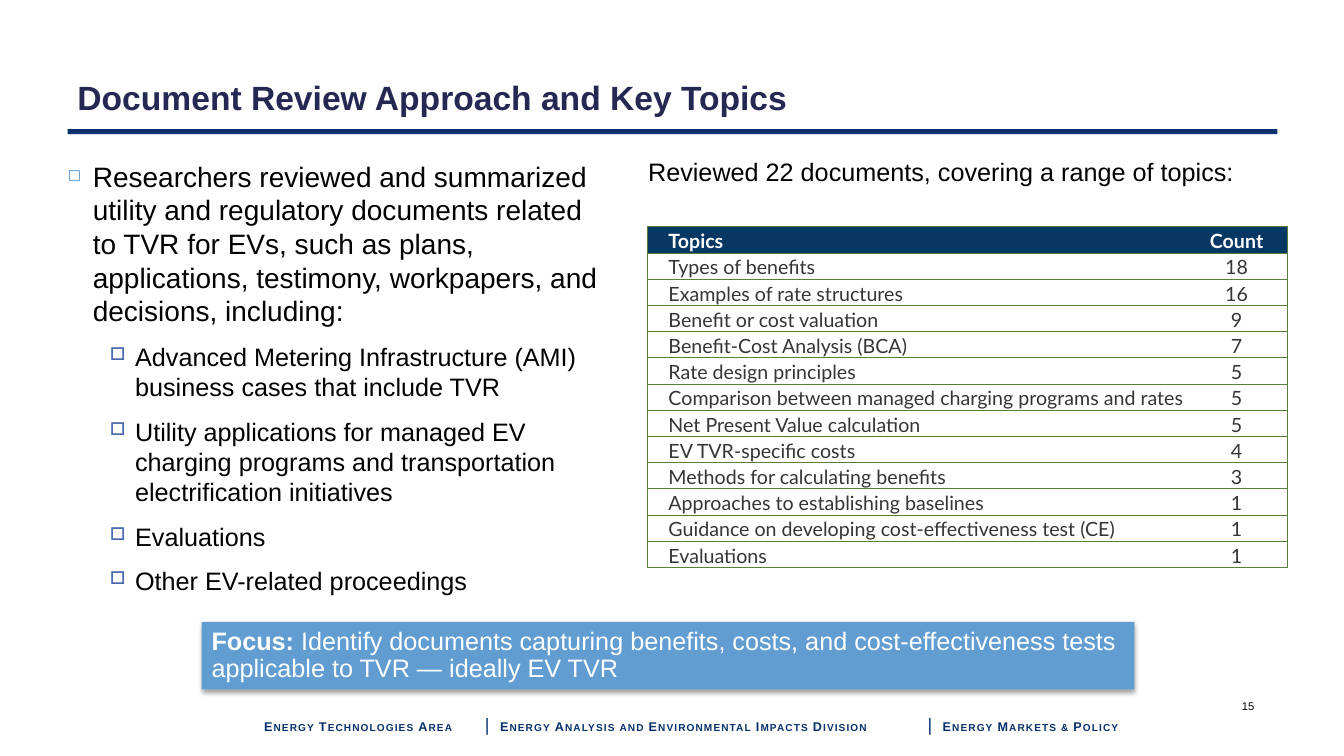
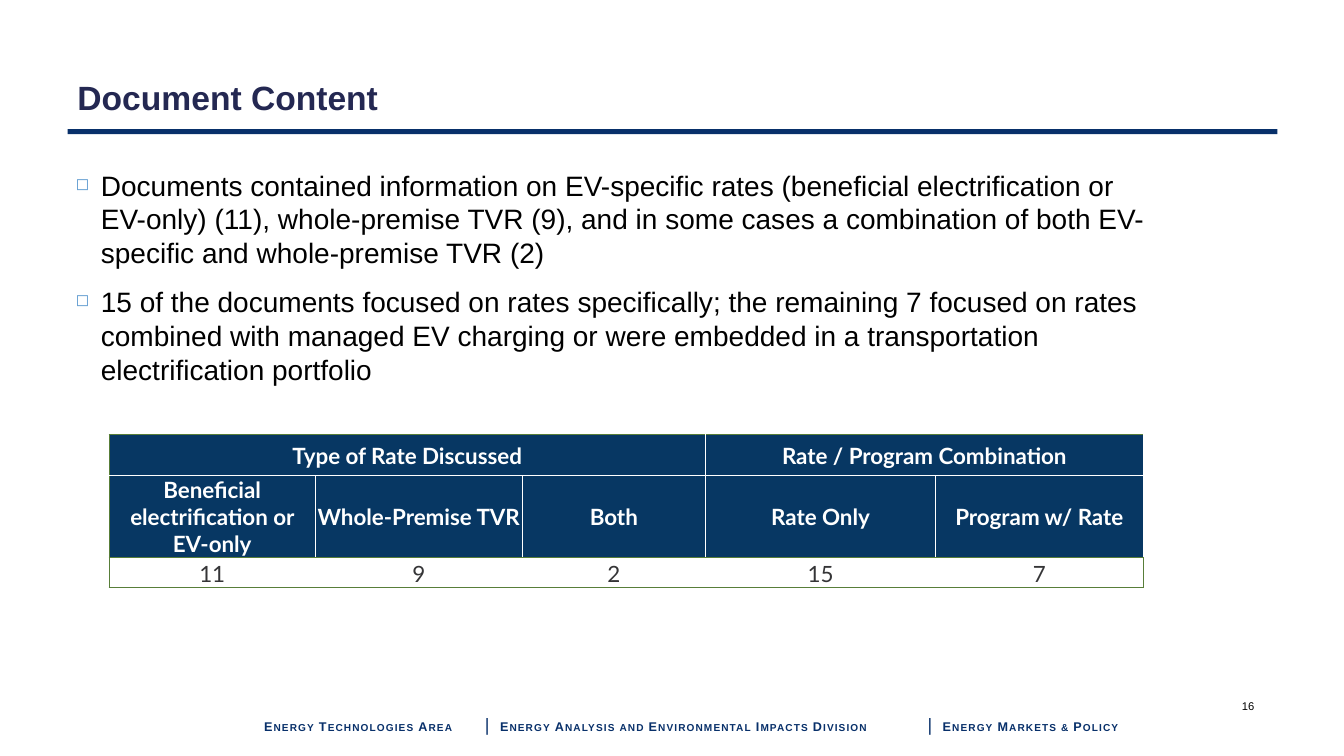
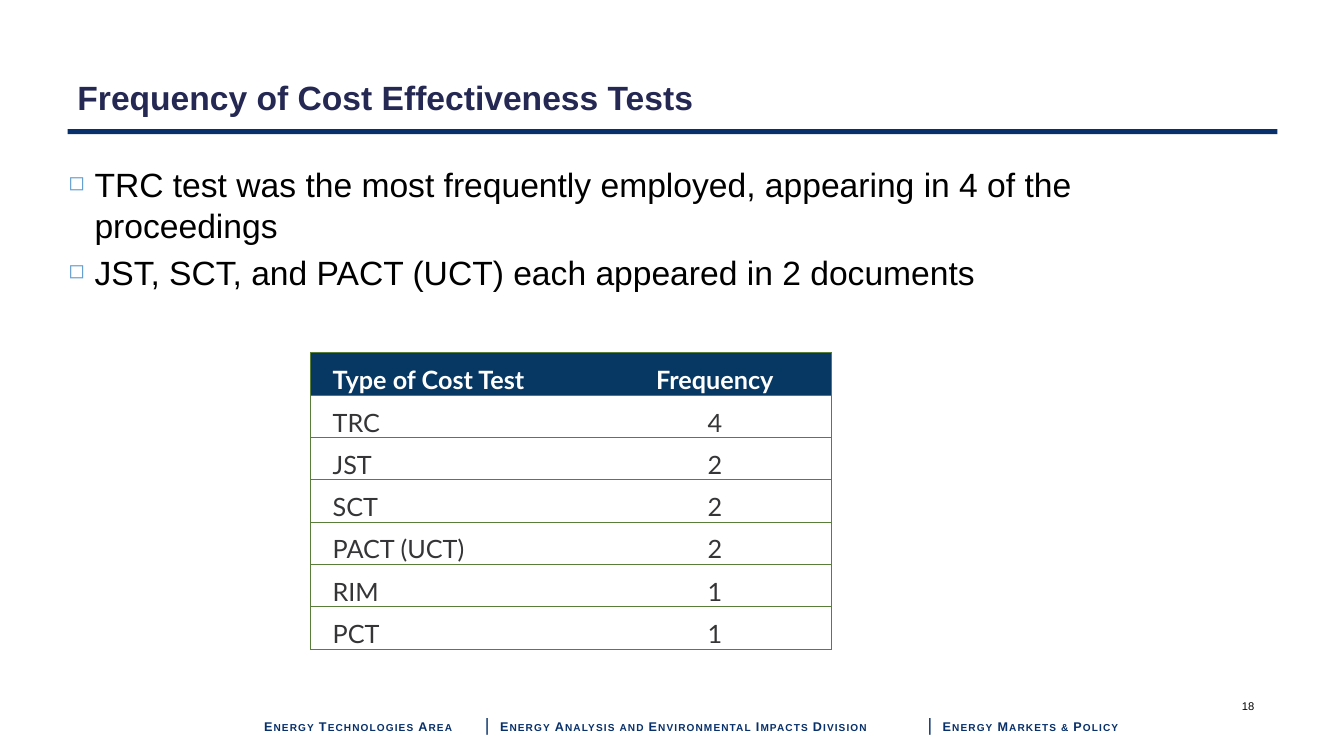
from dataclasses import dataclass
from typing import Optional

from lxml import etree
from pptx import Presentation
from pptx.dml.color import RGBColor
from pptx.enum.shapes import MSO_SHAPE
from pptx.enum.text import MSO_ANCHOR, PP_ALIGN
from pptx.oxml.ns import qn
from pptx.util import Inches, Pt

RECTANGLE = MSO_SHAPE.RECTANGLE
TOP, MIDDLE, BOTTOM = MSO_ANCHOR.TOP, MSO_ANCHOR.MIDDLE, MSO_ANCHOR.BOTTOM
LEFT, CENTER = PP_ALIGN.LEFT, PP_ALIGN.CENTER

BODY_FONT, TABLE_FONT = "Arial", "Lato"
NAVY, TITLE_INK, HEADER_FILL = "08306A", "242852", "073763"
SKY, INDIGO, GREEN = "629DD1", "4A66AC", "587E39"
BLACK, WHITE, GREY = "000000", "FFFFFF", "353537"
NO_STYLE = "{2D5ABB26-0587-4C30-8999-92F81FD0307C}"

FOOTER_PARTS = [
    "Energy Technologies Area\t",
    "|",
    "\tEnergy Analysis and Environmental Impacts Division\t",
    "|",
    "\tEnergy Markets & Policy",
]
FOOTER_TABS = [2.19, 2.34, 6.58, 6.73]


@dataclass
class Bullet:
    """Look of one bullet level."""
    char: str
    color: str
    percent: int
    indent: float
    hanging: float
    size: int
    before: float
    after: float


@dataclass
class Grid:
    """A table with one or more header rows."""
    left: float
    top: float
    widths: list[float]
    heights: list[float]
    rows: list[list[str]]
    size: int
    inset: float
    header_rows: int = 1
    header_line: Optional[str] = None
    label_column: bool = True
    header_anchor: MSO_ANCHOR = BOTTOM


MAIN = Bullet("◻", SKY, 60, 0.25, 0.25, 20, 5.2, 6)
SUB = Bullet("□", INDIGO, 70, 0.67, 0.25, 18, 4.1, 6)
LARGE = Bullet("◻", SKY, 60, 0.26, 0.26, 24, 5.2, 0)


def rgb(color: str) -> RGBColor:
    return RGBColor.from_string(color)


def add_node(parent, tag: str, **attributes):
    node = etree.SubElement(parent, qn(tag))
    for name, value in attributes.items():
        node.set(name, str(value))
    return node


def set_font(font, size: int, color: str, name: str = BODY_FONT, bold: bool = False) -> None:
    font.size, font.name, font.bold = Pt(size), name, bold
    font.color.rgb = rgb(color)


def add_box(page, left: float, top: float, width: float, height: float,
            anchor: MSO_ANCHOR = TOP, inset: Optional[float] = None):
    """Add a wrapping text box and return its text frame."""
    frame = page.shapes.add_textbox(
        Inches(left), Inches(top), Inches(width), Inches(height)).text_frame
    frame.word_wrap = True
    frame.vertical_anchor = anchor
    if inset is not None:
        set_margins(frame, inset, inset)
    return frame


def set_margins(target, side: float, top: float, bottom: Optional[float] = None) -> None:
    target.margin_left = target.margin_right = Inches(side)
    target.margin_top = Inches(top)
    target.margin_bottom = Inches(top if bottom is None else bottom)


def add_line(page, text: str, left: float, top: float, width: float, height: float,
             size: int, color: str = BLACK, bold: bool = False,
             anchor: MSO_ANCHOR = TOP) -> None:
    para = add_box(page, left, top, width, height, anchor).paragraphs[0]
    para.text = text
    set_font(para.font, size, color, bold=bold)


def add_rectangle(page, left: float, top: float, width: float, height: float, fill: str):
    box = page.shapes.add_shape(
        RECTANGLE, Inches(left), Inches(top), Inches(width), Inches(height))
    box.shadow.inherit = False
    box.fill.solid()
    box.fill.fore_color.rgb = rgb(fill)
    box.line.fill.background()
    return box


def add_bullets(frame, items: list[tuple[Bullet, str]]) -> None:
    for index, (style, text) in enumerate(items):
        para = frame.add_paragraph() if index else frame.paragraphs[0]
        para.text = text
        properties = para._p.get_or_add_pPr()
        properties.set("marL", str(Inches(style.indent)))
        properties.set("indent", str(-Inches(style.hanging)))
        add_node(add_node(properties, "a:buClr"), "a:srgbClr", val=style.color)
        add_node(properties, "a:buSzPct", val=style.percent * 1000)
        add_node(properties, "a:buChar", char=style.char)
        para.space_before = Pt(style.before if index else 0)
        para.space_after = Pt(style.after)
        set_font(para.font, style.size, BLACK)


def add_footer(page) -> None:
    frame = add_box(page, 2.14, 6.99, 9.67, 0.48)
    frame.margin_left = Inches(0.48)
    para = frame.paragraphs[0]
    tabs = add_node(para._p.get_or_add_pPr(), "a:tabLst")
    for position in FOOTER_TABS:
        add_node(tabs, "a:tab", pos=Inches(position), algn="l")
    para.font.name = BODY_FONT
    para.font.color.rgb = rgb(NAVY)
    for part in FOOTER_PARTS:
        span = para.add_run()
        span.text = part
        is_bar = part == "|"
        span.font.size, span.font.bold = Pt(16 if is_bar else 9), not is_bar
        properties = span._r.get_or_add_rPr()
        properties.set("spc", "80")
        properties.set("cap", "small")


def add_page(deck, title: str, number: int):
    """Add a slide with the shared title, rule, footer and page number."""
    page = deck.slides.add_slide(deck.slide_layouts[6])
    add_rectangle(page, 0.67, 1.28, 12, 0.05, NAVY)
    add_footer(page)
    add_line(page, title, 0.67, 0.71, 12, 0.5, 24, TITLE_INK, True, BOTTOM)
    add_line(page, str(number), 12.22, 6.89, 0.5, 0.4, 8)
    return page


def set_borders(cell, grid: Grid, row: int, column: int) -> None:
    """Green frame and row lines; header rows may have their own inner lines."""
    inner = grid.header_line if row < grid.header_rows else None
    last_header = row == grid.header_rows - 1
    is_last = column == len(grid.widths) - 1
    colors = {
        "a:lnL": inner if column else GREEN,
        "a:lnR": inner or (GREEN if is_last else None),
        "a:lnT": inner if row and inner else GREEN,
        "a:lnB": inner if inner and not last_header else GREEN,
    }
    properties = cell._tc.get_or_add_tcPr()
    for tag, color in colors.items():
        if color:
            line = add_node(properties, tag, w=Pt(0.5))
            add_node(add_node(line, "a:solidFill"), "a:srgbClr", val=color)


def add_grid(page, grid: Grid):
    table = page.shapes.add_table(
        len(grid.rows), len(grid.widths), Inches(grid.left), Inches(grid.top),
        Inches(sum(grid.widths)), Inches(sum(grid.heights))).table
    table.first_row = table.horz_banding = False
    table._tbl.tblPr.find(qn("a:tableStyleId")).text = NO_STYLE
    for column, width in zip(table.columns, grid.widths):
        column.width = Inches(width)
    for row, height in zip(table.rows, grid.heights):
        row.height = Inches(height)
    for row, texts in enumerate(grid.rows):
        is_header = row < grid.header_rows
        for column, text in enumerate(texts):
            cell = table.cell(row, column)
            set_borders(cell, grid, row, column)
            if is_header:
                cell.fill.solid()
                cell.fill.fore_color.rgb = rgb(HEADER_FILL)
            else:
                cell.fill.background()
            set_margins(cell, grid.inset, grid.inset, 0)
            cell.vertical_anchor = grid.header_anchor if is_header else BOTTOM
            para = cell.text_frame.paragraphs[0]
            para.text = text
            is_label = grid.label_column and column == 0
            para.alignment = LEFT if is_label else CENTER
            if is_label:
                para._p.get_or_add_pPr().set("marL", str(Inches(0.2)))
            set_font(para.font, grid.size, WHITE if is_header else GREY, TABLE_FONT, is_header)
    return table


def add_focus(page, label: str, text: str) -> None:
    """Shadowed call-out with a bold lead word."""
    box = add_rectangle(page, 2, 6.17, 9.25, 0.67, SKY)
    effects = box._element.spPr.find(qn("a:effectLst"))
    shadow = add_node(effects, "a:outerShdw", blurRad=Pt(3), dist=Pt(2),
                      dir=90 * 60000, rotWithShape=0)
    add_node(add_node(shadow, "a:srgbClr", val=BLACK), "a:alpha", val=35000)
    frame = box.text_frame
    frame.word_wrap = True
    frame.vertical_anchor = MIDDLE
    para = frame.paragraphs[0]
    para.alignment, para.line_spacing = LEFT, 0.9
    para.font.size, para.font.name = Pt(18), BODY_FONT
    para.font.color.rgb = rgb(WHITE)
    for words, bold in ((label, True), (text, False)):
        span = para.add_run()
        span.text, span.font.bold = words, bold


def build_review(deck) -> None:
    page = add_page(deck, "Document Review Approach and Key Topics", 15)
    add_bullets(add_box(page, 0.67, 1.58, 5.39, 4.78, inset=0), [
        (MAIN, "Researchers reviewed and summarized utility and regulatory documents related "
               "to TVR for EVs, such as plans, applications, testimony, workpapers, and "
               "decisions, including:"),
        (SUB, "Advanced Metering Infrastructure (AMI) business cases that include TVR"),
        (SUB, "Utility applications for managed EV charging programs and transportation "
              "electrification initiatives"),
        (SUB, "Evaluations"),
        (SUB, "Other EV-related proceedings"),
    ])
    add_focus(page, "Focus: ",
              "Identify documents capturing benefits, costs, and cost-effectiveness tests "
              "applicable to TVR — ideally EV TVR")
    add_line(page, "Reviewed 22 documents, covering a range of topics:",
             6.33, 1.5, 6.54, 0.4, 18)
    topics = [
        ["Topics", "Count"],
        ["Types of benefits", "18"],
        ["Examples of rate structures", "16"],
        ["Benefit or cost valuation", "9"],
        ["Benefit-Cost Analysis (BCA)", "7"],
        ["Rate design principles", "5"],
        ["Comparison between managed charging programs and rates", "5"],
        ["Net Present Value calculation", "5"],
        ["EV TVR-specific costs", "4"],
        ["Methods for calculating benefits", "3"],
        ["Approaches to establishing baselines", "1"],
        ["Guidance on developing cost-effectiveness test (CE)", "1"],
        ["Evaluations", "1"],
    ]
    add_grid(page, Grid(6.42, 2.25, [5.34, 1.01], [0.26] * len(topics), topics, 14, 0.01))


def build_content(deck) -> None:
    page = add_page(deck, "Document Content", 16)
    rates = [
        ["Type of Rate Discussed", "", "", "Rate / Program Combination", ""],
        ["Beneficial electrification or EV-only", "Whole-Premise TVR", "Both",
         "Rate Only", "Program w/ Rate"],
        ["11", "9", "2", "15", "7"],
    ]
    table = add_grid(page, Grid(
        1.08, 4.31, [2.05, 2.05, 1.82, 2.28, 2.06], [0.41, 0.8, 0.3], rates, 16, 0.01,
        header_rows=2, header_line=WHITE, label_column=False, header_anchor=MIDDLE))
    for first, last in ((0, 2), (3, 4)):
        group = table.cell(0, first)
        group.merge(table.cell(0, last))
        set_margins(group, 0.11, 0.06)
        group.vertical_anchor = BOTTOM
    add_bullets(add_box(page, 0.75, 1.67, 10.75, 2.33, inset=0), [
        (MAIN, "Documents contained information on EV-specific rates (beneficial "
               "electrification or EV-only) (11), whole-premise TVR (9), and in some cases a "
               "combination of both EV-specific and whole-premise TVR (2)"),
        (MAIN, "15 of the documents focused on rates specifically; the remaining 7 focused on "
               "rates combined with managed EV charging or were embedded in a transportation "
               "electrification portfolio"),
    ])


def build_frequency(deck) -> None:
    page = add_page(deck, "Frequency of Cost Effectiveness Tests", 18)
    add_bullets(add_box(page, 0.58, 1.58, 11, 1.65), [
        (LARGE, "TRC test was the most frequently employed, appearing in 4 of the proceedings"),
        (LARGE, "JST, SCT, and PACT (UCT) each appeared in 2 documents"),
    ])
    tests = [
        ["Type of Cost Test", "Frequency"],
        ["TRC", "4"],
        ["JST", "2"],
        ["SCT", "2"],
        ["PACT (UCT)", "2"],
        ["RIM", "1"],
        ["PCT", "1"],
    ]
    add_grid(page, Grid(3.08, 3.5, [2.85, 2.32], [0.42] * len(tests), tests, 18, 0.02))


def main() -> None:
    deck = Presentation()
    deck.slide_width, deck.slide_height = Inches(13.33), Inches(7.5)
    build_review(deck)
    build_content(deck)
    build_frequency(deck)
    deck.save("out.pptx")


if __name__ == "__main__":
    main()
